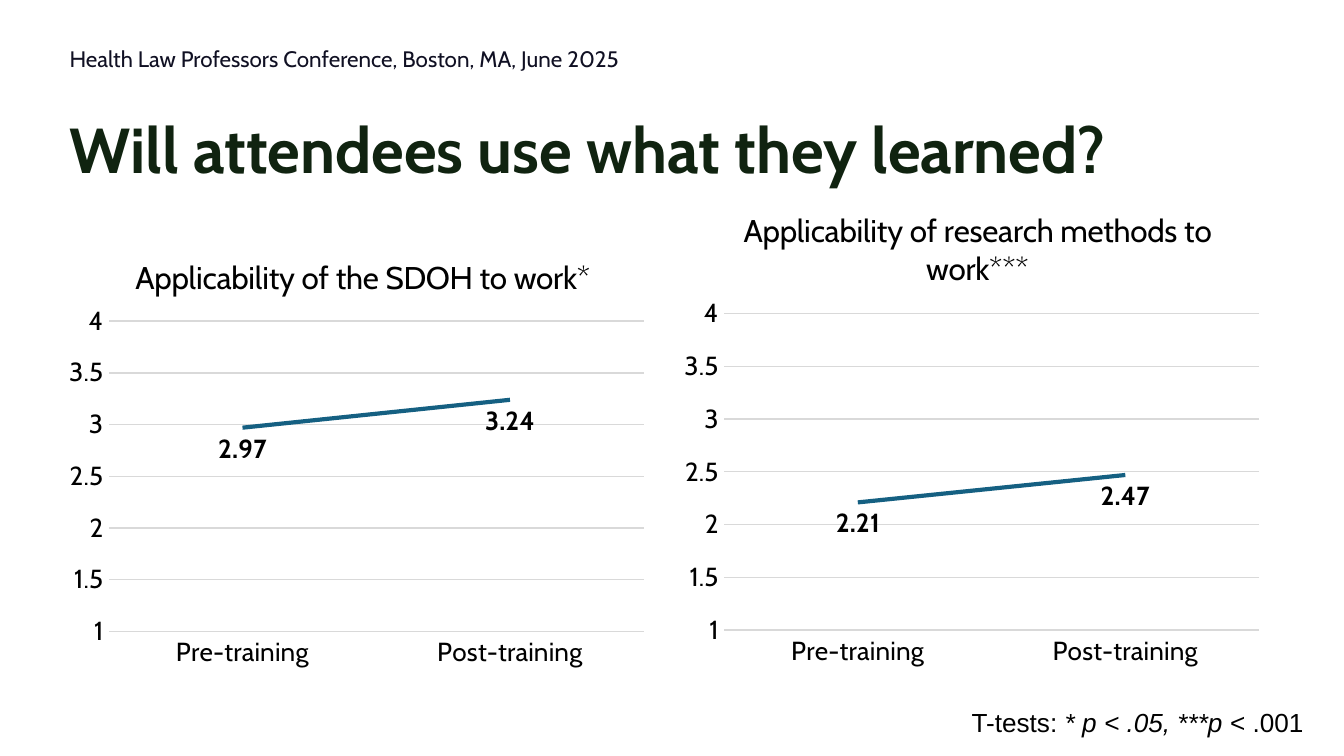
from dataclasses import dataclass

from lxml.etree import SubElement as Sub
from pptx import Presentation
from pptx.chart.data import CategoryChartData as Data
from pptx.dml.color import RGBColor as RGB
from pptx.enum.chart import XL_CHART_TYPE as Kind, XL_LABEL_POSITION as Spot
from pptx.enum.chart import XL_TICK_MARK as Tick
from pptx.enum.text import MSO_ANCHOR as Anchor, PP_ALIGN as Align
from pptx.oxml.ns import qn
from pptx.util import Pt

HEX = {"title": "102310", "head": "101023", "text": "000000",
       "grid": "D9D9D9", "line": "156082", "back": "FFFFFF"}
FACE = "Cabin"

Box = tuple[float, float, float, float]


@dataclass
class Plot:
    title: str
    vals: tuple[float, float]
    box: Box                    # points
    spot: tuple[float, float]   # title corner, share of the chart
    area: Box                   # plot area, share of the chart


PLOTS = [
    Plot("Applicability of the SDOH to work*", (2.97, 3.24),
         (31, 119.5, 321, 243.5), (0.12, 0.06), (0.085, 0.216, 0.893, 0.683)),
    Plot("Applicability of research methods to work***", (2.21, 2.47),
         (360, 94.3, 321, 268.5), (0.11, 0.055), (0.087, 0.275, 0.893, 0.631)),
]


def color(name: str) -> RGB:
    return RGB.from_string(HEX[name])


def style(font, size: float, tint="text", face=FACE, bold=False, slant=False):
    font.size, font.name = Pt(size), face
    font.bold, font.italic = bold, slant
    font.color.rgb = color(tint)


def write(shape, parts, anchor=Anchor.TOP, inset=None, after=None, lead=None,
          **look):
    """Fill a shape with one paragraph of (text, slanted) parts."""
    frame = shape.text_frame
    frame.word_wrap = True
    frame.vertical_anchor = anchor
    if inset is not None:
        frame.margin_left = frame.margin_right = Pt(inset)
        frame.margin_top = frame.margin_bottom = Pt(inset)
    par = frame.paragraphs[0]
    par.alignment = Align.LEFT
    par.space_after, par.line_spacing = after, lead
    for text, slant in parts:
        run = par.add_run()
        run.text = text
        style(run.font, slant=slant, **look)


def place(node, vals: dict[str, float], inner=False):
    """Give a chart part a manual layout."""
    lay = node.find(qn("c:layout"))
    if lay is None:
        lay = Sub(node, qn("c:layout"))
        tx = node.find(qn("c:tx"))
        if tx is not None:
            tx.addnext(lay)
        else:
            node.insert(0, lay)
    man = Sub(lay, qn("c:manualLayout"))
    if inner:
        Sub(man, qn("c:layoutTarget"), val="inner")
    for key in "xy":
        Sub(man, qn(f"c:{key}Mode"), val="edge")
    for key, val in vals.items():
        Sub(man, qn(f"c:{key}"), val=str(val))


def draw(slide, plot: Plot):
    data = Data(number_format="#,##0.00")
    data.categories = ["Pre-training", "Post-training"]
    data.add_series("Series 1", plot.vals)
    chart = slide.shapes.add_chart(
        Kind.LINE, *map(Pt, plot.box), data).chart
    chart.has_legend = False
    style(chart.font, 14)

    # Title
    chart.has_title = True
    par = chart.chart_title.text_frame.paragraphs[0]
    run = par.add_run()
    run.text = plot.title
    style(run.font, 16.8)
    root = chart.element.find(qn("c:chart"))
    place(root.find(qn("c:title")), dict(zip("xy", plot.spot)))
    place(root.find(qn("c:plotArea")), dict(zip("xywh", plot.area)), True)

    # Axes
    cat, val = chart.category_axis, chart.value_axis
    for axis in (cat, val):
        axis.major_tick_mark = axis.minor_tick_mark = Tick.NONE
        style(axis.tick_labels.font, 14)
    val.minimum_scale, val.maximum_scale, val.major_unit = 1, 4, 0.5
    val.tick_labels.number_format = "General"
    val.tick_labels.number_format_is_linked = False
    val.format.line.fill.background()
    val.has_major_gridlines = True
    for line in (cat.format.line, val.major_gridlines.format.line):
        line.color.rgb = color("grid")
        line.width = Pt(0.75)

    # Series and its labels
    body = chart.plots[0]
    body.vary_by_categories = False
    row = body.series[0]
    row.smooth = False
    row.format.line.color.rgb = color("line")
    row.format.line.width = Pt(2.25)
    tags = row.data_labels
    tags.show_value = True
    tags.position = Spot.BELOW
    tags.number_format = "#,##0.00"
    tags.number_format_is_linked = False
    style(tags.font, 14, bold=True)


def main():
    deck = Presentation()
    deck.slide_width, deck.slide_height = Pt(720), Pt(405)
    slide = deck.slides.add_slide(deck.slide_layouts[5])
    slide.background.fill.solid()
    slide.background.fill.fore_color.rgb = color("back")

    # Title and header line
    title = slide.shapes.title
    title.left, title.top, title.width, title.height = map(
        Pt, (30.2, 55.4, 659.5, 51.8))
    write(title, [("Will attendees use what they learned?", False)],
          anchor=Anchor.BOTTOM, inset=7.2, size=34, tint="title", bold=True)
    head = slide.shapes.add_textbox(*map(Pt, (30.2, 18, 585.4, 24.5)))
    write(head, [("Health Law Professors Conference, Boston, MA, June 2025",
                  False)],
          anchor=Anchor.MIDDLE, inset=7.2, after=Pt(12), lead=1.15,
          size=12, tint="head")

    # Charts
    for plot in PLOTS:
        draw(slide, plot)

    # Test note
    note = slide.shapes.add_textbox(*map(Pt, (513.4, 375.1, 213.8, 24.5)))
    write(note, [("T-tests:", False), (" * p < .05, ***p", True),
                 (" < .001", False)], size=14, face="Arial")
    deck.save("out.pptx")


if __name__ == "__main__":
    main()
